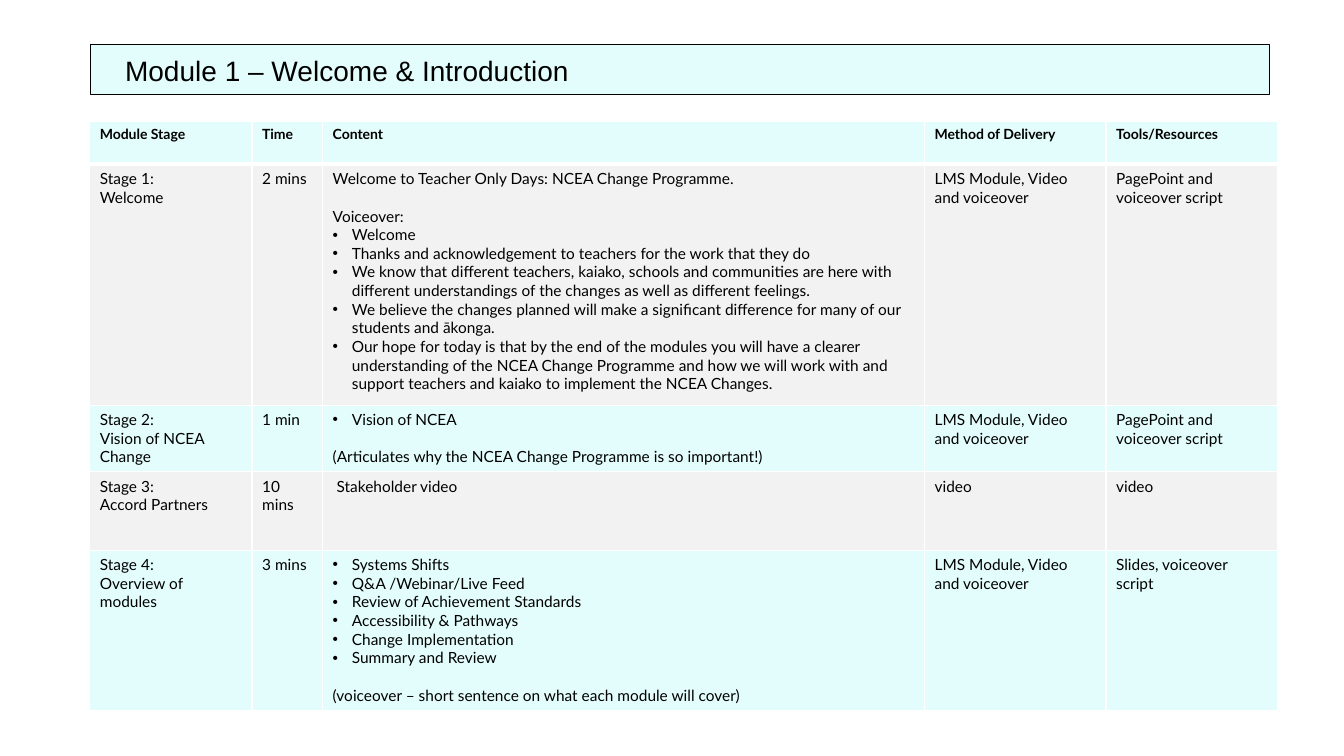
from pptx import Presentation
from pptx.dml.color import RGBColor
from pptx.enum import shapes, text
from pptx.oxml import parse_xml
from pptx.oxml.ns import nsdecls
from pptx.util import Inches, Pt

AQUA = RGBColor(0xE3, 0xFD, 0xFC)
GREY = RGBColor(0xF2, 0xF2, 0xF2)
BLACK = RGBColor(0, 0, 0)

COLUMN_WIDTHS = [1.61, 0.7, 5.97, 1.8, 1.7]
ROW_HEIGHTS = [0.43, 2.39, 0.66, 0.78, 1.59]
INDENT = Inches(0.19)
LINE_GAP = Pt(13.4)

LMS = ["LMS Module, Video and voiceover"]
SCRIPT = ["PagePoint and voiceover script"]

# "• " opens a bullet and "¶" opens a paragraph set off by one line
ROWS = [
    [["Module Stage"], ["Time"], ["Content"], ["Method of Delivery"], ["Tools/Resources"]],
    [["Stage 1:", "Welcome"], ["2 mins"], [
        "Welcome to Teacher Only Days: NCEA Change Programme.",
        "¶Voiceover:",
        "• Welcome",
        "• Thanks and acknowledgement to teachers for the work that they do",
        "• We know that different teachers, kaiako, schools and communities are here with "
        "different understandings of the changes as well as different feelings.",
        "• We believe the changes planned will make a significant difference for many of our "
        "students and ākonga.",
        "• Our hope for today is that by the end of the modules you will have a clearer "
        "understanding of the NCEA Change Programme and how we will work with and "
        "support teachers and kaiako to implement the NCEA Changes.",
    ], LMS, SCRIPT],
    [["Stage 2:", "Vision of NCEA Change"], ["1 min"], [
        "• Vision of NCEA",
        "¶(Articulates why the NCEA Change Programme is so important!)",
    ], LMS, SCRIPT],
    [["Stage 3:", "Accord Partners"], ["10 mins"], [" Stakeholder video"], ["video"], ["video"]],
    [["Stage 4:", "Overview of modules"], ["3 mins"], [
        "• Systems Shifts",
        "• Q&A /Webinar/Live Feed",
        "• Review of Achievement Standards",
        "• Accessibility & Pathways",
        "• Change Implementation",
        "• Summary and Review",
        "¶(voiceover – short sentence on what each module will cover)",
    ], LMS, ["Slides, voiceover script"]],
]


def format_span(span, size, name, bold):
    values = {"size": Pt(size), "name": name, "bold": bold}
    for key, value in values.items():
        setattr(span.font, key, value)
    span.font.color.rgb = BLACK


def add_border(cell, side, points):
    cell._tc.get_or_add_tcPr().append(parse_xml(
        f'<a:ln{side} {nsdecls("a")} w="{Pt(points)}"><a:solidFill>'
        f'<a:srgbClr val="FFFFFF"/></a:solidFill></a:ln{side}>'))


deck = Presentation()
deck.slide_width, deck.slide_height = Inches(13.33), Inches(7.5)
page = deck.slides.add_slide(deck.slide_layouts[5])

title = page.shapes.title
title_place = {"left": 1.14, "top": 0.47, "width": 11.28, "height": 0.5}
for key, value in title_place.items():
    setattr(title, key, Inches(value))
title.text_frame.vertical_anchor = text.MSO_ANCHOR.MIDDLE
title.text_frame.auto_size = text.MSO_AUTO_SIZE.NONE
para = title.text_frame.paragraphs[0]
para.alignment = text.PP_ALIGN.LEFT
para.line_spacing = 0.9
span = para.add_run()
span.text = "Module 1 – Welcome & Introduction"
format_span(span, 20, "Arial", False)

banner = page.shapes.add_shape(
    shapes.MSO_SHAPE.RECTANGLE, Inches(0.9), Inches(0.44), Inches(11.69), Inches(0.5))
banner.shadow.inherit = False
banner.fill.solid()
banner.fill.fore_color.rgb = AQUA
banner.line.color.rgb = BLACK
banner.line.width = Pt(1)
title.element.addprevious(banner.element)

table = page.shapes.add_table(
    len(ROWS), len(COLUMN_WIDTHS), Inches(0.89), Inches(1.2),
    Inches(sum(COLUMN_WIDTHS)), Inches(sum(ROW_HEIGHTS))).table
table.horz_banding = False
for column, width in zip(table.columns, COLUMN_WIDTHS):
    column.width = Inches(width)

for row_index, (stage, height) in enumerate(zip(ROWS, ROW_HEIGHTS)):
    table.rows[row_index].height = Inches(height)
    header = row_index == 0
    borders = {"L": 1, "R": 1, "T": 3 if row_index == 1 else 1, "B": 3 if header else 1}
    for column_index, lines in enumerate(stage):
        cell = table.cell(row_index, column_index)
        for side, points in borders.items():
            add_border(cell, side, points)
        cell.fill.solid()
        cell.fill.fore_color.rgb = GREY if row_index % 2 else AQUA
        for line_index, line in enumerate(lines):
            frame = cell.text_frame
            para = frame.add_paragraph() if line_index else frame.paragraphs[0]
            if line.startswith("¶"):
                para.space_before = LINE_GAP
            if line.startswith("• "):
                properties = para._p.get_or_add_pPr()
                properties.set("marL", str(INDENT))
                properties.set("indent", str(-INDENT))
                properties.append(parse_xml(f'<a:buFont {nsdecls("a")} typeface="Arial"/>'))
                properties.append(parse_xml(f'<a:buChar {nsdecls("a")} char="•"/>'))
            span = para.add_run()
            span.text = line.removeprefix("¶").removeprefix("• ")
            format_span(span, 10 if header else 11, "Lato", header)

deck.save("out.pptx")
